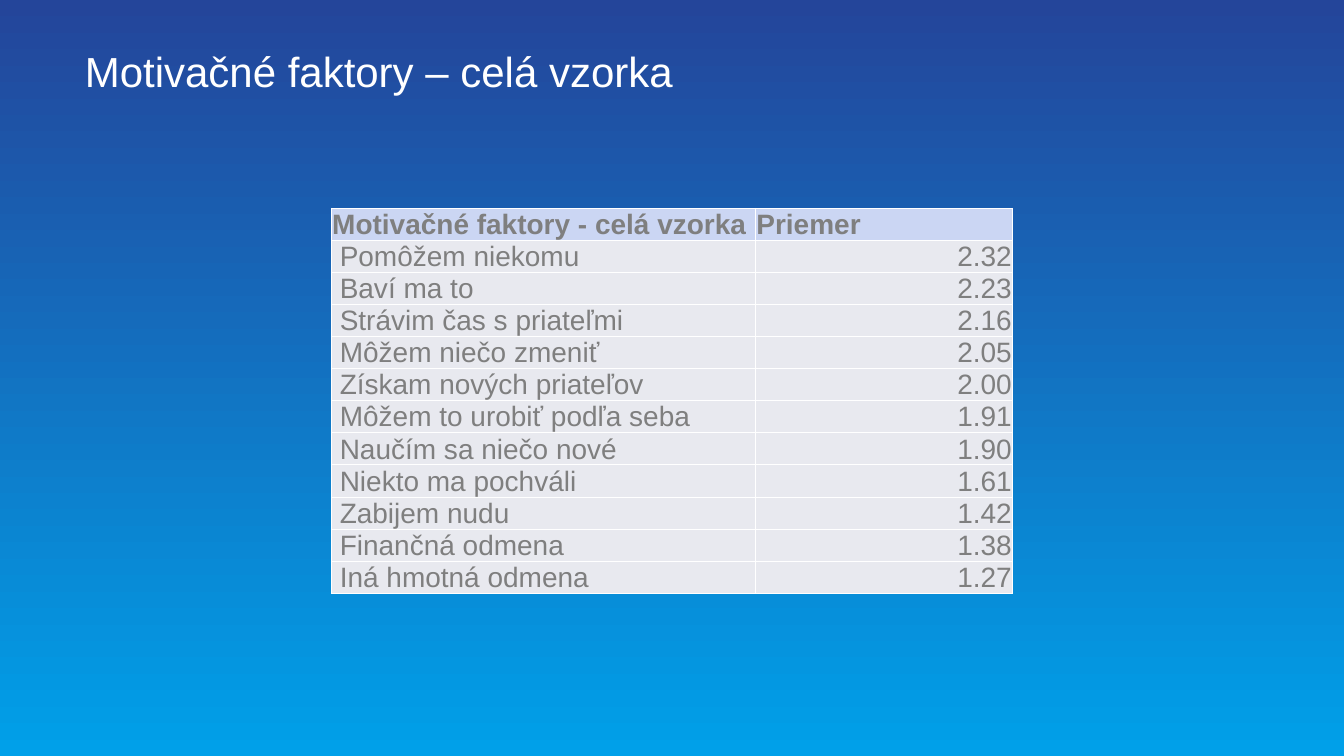
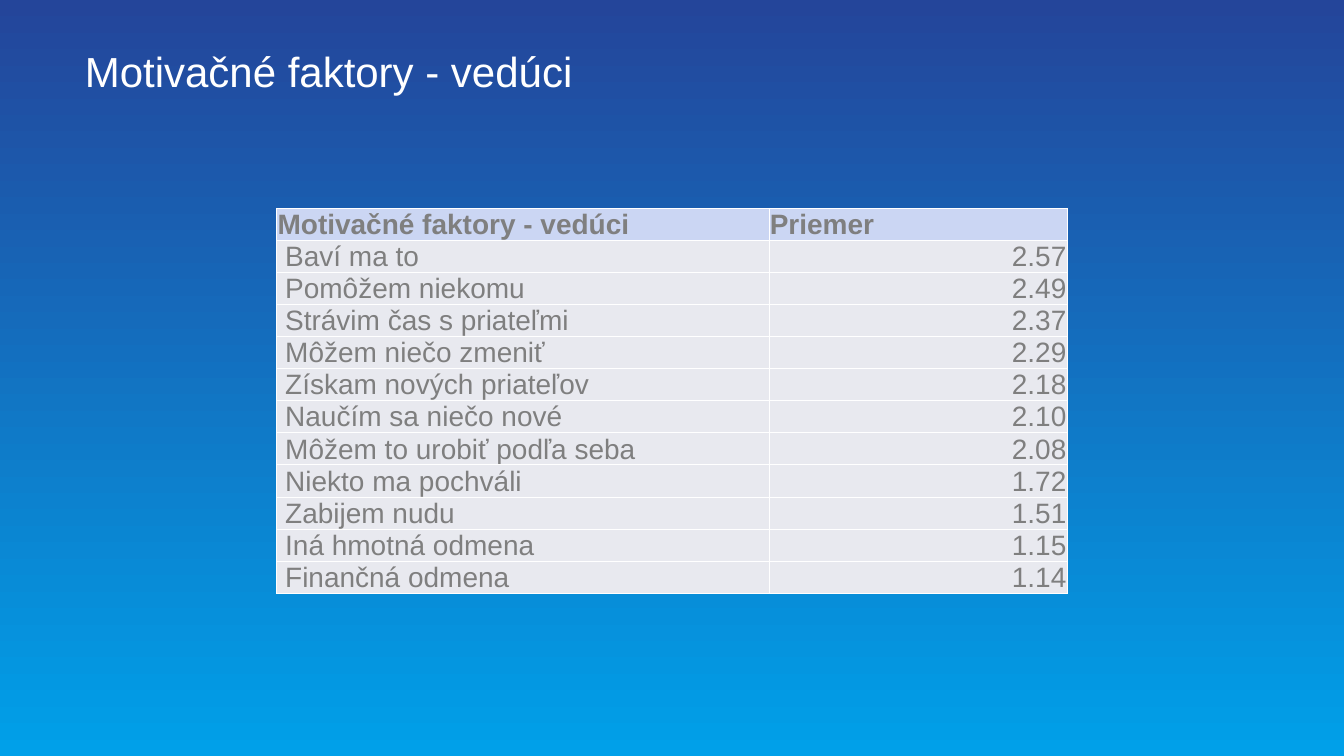
import lxml.etree
import pptx
import pptx.dml.color
import pptx.enum.text
import pptx.oxml.ns
import pptx.util

Inches = pptx.util.Inches
Pt = pptx.util.Pt
RGBColor = pptx.dml.color.RGBColor
Align = pptx.enum.text.PP_ALIGN
Anchor = pptx.enum.text.MSO_ANCHOR
qn = pptx.oxml.ns.qn

SKY_TOP = RGBColor(0x24, 0x45, 0x9A)
SKY_BOTTOM = RGBColor(0x00, 0xA0, 0xE9)
WHITE = RGBColor(0xFF, 0xFF, 0xFF)
GREY = RGBColor(0x7F, 0x7F, 0x7F)
HEADER_FILL = RGBColor(0xCB, 0xD6, 0xF3)
BODY_FILL = RGBColor(0xE8, 0xE9, 0xEF)

FONT = "Arial"
SLIDE_WIDTH, SLIDE_HEIGHT = 16, 9
TITLE_BOX = (0.91, 0.56, 14.17, 0.78)
TABLE_TOP = 2.48
ROW_HEIGHT = 0.38
LABEL_INDENT = 0.1

TITLE_FONT = {"name": FONT, "size": Pt(36), "bold": False}
CELL_FONT = {"name": FONT, "size": Pt(24)}
TITLE_FRAME = {"word_wrap": True, "vertical_anchor": Anchor.TOP,
               "auto_size": pptx.enum.text.MSO_AUTO_SIZE.NONE}
CELL_FORMAT = {"margin_left": Inches(0.01), "margin_right": Inches(0.01),
               "margin_top": Inches(0.01), "margin_bottom": 0,
               "vertical_anchor": Anchor.BOTTOM}

SURVEYS = [
    {
        "title": "Motivačné faktory – celá vzorka",
        "heading": "Motivačné faktory - celá vzorka",
        "columns": (5.05, 3.06),
        "factors": [
            ("Pomôžem niekomu", 2.32),
            ("Baví ma to", 2.23),
            ("Strávim čas s priateľmi", 2.16),
            ("Môžem niečo zmeniť", 2.05),
            ("Získam nových priateľov", 2.00),
            ("Môžem to urobiť podľa seba", 1.91),
            ("Naučím sa niečo nové", 1.90),
            ("Niekto ma pochváli", 1.61),
            ("Zabijem nudu", 1.42),
            ("Finančná odmena", 1.38),
            ("Iná hmotná odmena", 1.27),
        ],
    },
    {
        "title": "Motivačné faktory - vedúci",
        "heading": "Motivačné faktory - vedúci",
        "columns": (5.86, 3.55),
        "factors": [
            ("Baví ma to", 2.57),
            ("Pomôžem niekomu", 2.49),
            ("Strávim čas s priateľmi", 2.37),
            ("Môžem niečo zmeniť", 2.29),
            ("Získam nových priateľov", 2.18),
            ("Naučím sa niečo nové", 2.10),
            ("Môžem to urobiť podľa seba", 2.08),
            ("Niekto ma pochváli", 1.72),
            ("Zabijem nudu", 1.51),
            ("Iná hmotná odmena", 1.15),
            ("Finančná odmena", 1.14),
        ],
    },
]


def apply_format(target, values):
    """Set each named attribute of the target."""
    for name, value in values.items():
        setattr(target, name, value)


def paint_background(master):
    """Give the master its top-to-bottom blue gradient."""
    sky = master.background.fill
    sky.gradient()
    sky.gradient_angle = 270
    for stop, color in zip(sky.gradient_stops, (SKY_TOP, SKY_BOTTOM)):
        stop.color.rgb = color


def place_title(slide, wording, box):
    """Move the title placeholder into the box and style its wording."""
    title = slide.shapes.title
    edges = ("left", "top", "width", "height")
    apply_format(title, dict(zip(edges, map(Inches, box))))
    apply_format(title.text_frame, TITLE_FRAME)
    title.text_frame.text = wording
    line = title.text_frame.paragraphs[0]
    apply_format(line, {"alignment": Align.LEFT, "line_spacing": 0.9})
    apply_format(line.runs[0].font, TITLE_FONT)
    line.runs[0].font.color.rgb = WHITE


def draw_borders(cell):
    """Outline all four sides of a cell in white."""
    properties = cell._tc.get_or_add_tcPr()
    for side in ("a:lnL", "a:lnR", "a:lnT", "a:lnB"):
        border = lxml.etree.SubElement(properties, qn(side), w=str(Pt(1)))
        fill = lxml.etree.SubElement(border, qn("a:solidFill"))
        lxml.etree.SubElement(fill, qn("a:srgbClr"), val=str(WHITE))


def fill_cell(cell, wording, is_header, is_value):
    """Write one table cell as a header, a factor label or a mean value."""
    apply_format(cell, CELL_FORMAT)
    if not is_header and not is_value:
        cell.margin_left = Inches(LABEL_INDENT)
    draw_borders(cell)
    cell.fill.solid()
    cell.fill.fore_color.rgb = HEADER_FILL if is_header else BODY_FILL
    cell.text = wording
    line = cell.text_frame.paragraphs[0]
    line.alignment = Align.RIGHT if is_value and not is_header else Align.LEFT
    apply_format(line.runs[0].font, {**CELL_FONT, "bold": is_header})
    line.runs[0].font.color.rgb = GREY


def place_factor_table(slide, heading, factors, columns, top):
    """Centre the table of factors and their means below the given top."""
    rows = [(heading, "Priemer")]
    rows += [(factor, f"{mean:.2f}") for factor, mean in factors]
    width = sum(columns)
    table = slide.shapes.add_table(
        len(rows), len(columns), Inches((SLIDE_WIDTH - width) / 2), Inches(top),
        Inches(width), Inches(ROW_HEIGHT * len(rows))).table
    apply_format(table, {"first_row": False, "horz_banding": False})
    for column, column_width in zip(table.columns, columns):
        column.width = Inches(column_width)
    for row_index, row in enumerate(rows):
        table.rows[row_index].height = Inches(ROW_HEIGHT)
        for column_index, wording in enumerate(row):
            fill_cell(table.cell(row_index, column_index), wording,
                      row_index == 0, column_index == 1)


def add_survey_slide(deck, survey):
    """Add one slide with a title and its table of factors."""
    slide = deck.slides.add_slide(deck.slide_layouts[5])
    place_title(slide, survey["title"], TITLE_BOX)
    place_factor_table(slide, survey["heading"], survey["factors"],
                       survey["columns"], TABLE_TOP)


def main():
    """Build and save the deck."""
    deck = pptx.Presentation()
    apply_format(deck, {"slide_width": Inches(SLIDE_WIDTH),
                        "slide_height": Inches(SLIDE_HEIGHT)})
    paint_background(deck.slide_master)
    for survey in SURVEYS:
        add_survey_slide(deck, survey)
    deck.save("out.pptx")


if __name__ == "__main__":
    main()
